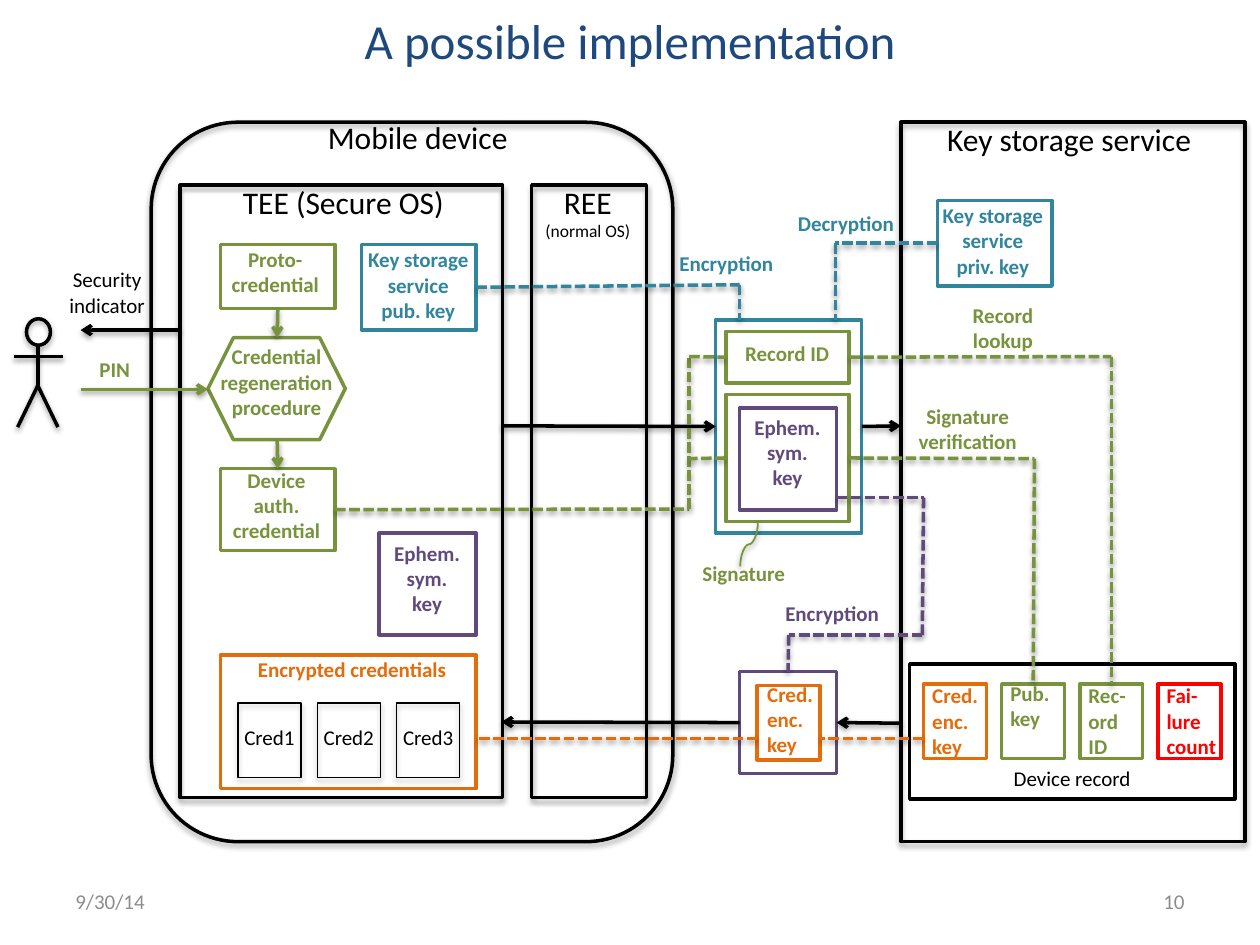
from dataclasses import dataclass
from typing import NamedTuple, Optional, Union

from lxml import etree
from pptx import Presentation
from pptx.dml.color import RGBColor
from pptx.enum.dml import MSO_LINE
from pptx.enum.shapes import MSO_CONNECTOR, MSO_SHAPE
from pptx.enum.text import MSO_ANCHOR, MSO_AUTO_SIZE, PP_ALIGN
from pptx.oxml.ns import qn
from pptx.util import Inches, Pt

RECT, ROUNDED = MSO_SHAPE.RECTANGLE, MSO_SHAPE.ROUNDED_RECTANGLE
HEXAGON, OVAL = MSO_SHAPE.HEXAGON, MSO_SHAPE.OVAL
STRAIGHT, CURVE = MSO_CONNECTOR.STRAIGHT, MSO_CONNECTOR.CURVE
LEFT, CENTER, RIGHT = PP_ALIGN.LEFT, PP_ALIGN.CENTER, PP_ALIGN.RIGHT
MIDDLE, TOP_ANCHOR = MSO_ANCHOR.MIDDLE, MSO_ANCHOR.TOP
GROW, NO_GROW = MSO_AUTO_SIZE.SHAPE_TO_FIT_TEXT, MSO_AUTO_SIZE.NONE
DASH = MSO_LINE.SQUARE_DOT
TOP, WEST, BOTTOM, EAST = range(4)
FONT = "Calibri"
COLORS = {
    "black": "000000", "white": "FFFFFF", "gray": "8C8C8C", "navy": "1F497D",
    "green": "77933C", "teal": "31859C", "purple": "604A7B",
    "orange": "E46C0A", "red": "FF0000",
}


class Point(NamedTuple):
    x: float
    y: float


class Side(NamedTuple):
    box: str
    site: int


Stop = Union[Point, Side]


@dataclass
class Box:
    key: str
    left: float
    top: float
    width: float
    height: float
    color: str = "black"
    shadow: bool = False
    kind: int = RECT
    weight: float = 2


@dataclass
class Label:
    text: str
    left: float
    top: float
    width: float
    height: float
    color: str = "black"
    size: float = 12
    bold: bool = True
    align: int = CENTER
    right_inset: float = 0.1
    top_inset: float = 0.05
    second_size: Optional[float] = None
    fill: Optional[str] = None
    footer: bool = False


@dataclass
class Route:
    stops: list
    color: str = "black"
    dashed: bool = False
    arrow: bool = False


FIELD_X = [7.33 + 0.62 * i for i in range(4)]
FIELDS = [("Cred. enc. key", "orange", 5.37), ("Pub. key", "green", 5.35),
          ("Rec-ord ID", "green", 5.37), ("Fai-lure count", "red", 5.37)]
CRED_X = [1.89 + 0.63 * i for i in range(3)]

BOXES = [
    Box("mobile", 1.2, 0.97, 4.14, 5.71, shadow=True, kind=ROUNDED),
    Box("service", 7.15, 0.97, 2.73, 5.71, shadow=True),
    Box("tee", 1.43, 1.47, 2.56, 4.86, shadow=True),
    Box("ree", 4.22, 1.47, 0.91, 4.86, shadow=True),
    Box("regeneration", 1.65, 2.68, 1.09, 0.81, "green", kind=HEXAGON),
    Box("head", 0.21, 2.53, 0.19, 0.21, shadow=True, kind=OVAL),
    Box("proto", 1.75, 1.94, 0.91, 0.51, "green"),
    Box("device auth", 1.75, 3.72, 0.91, 0.65, "green"),
    Box("device record", 7.22, 5.27, 2.58, 1.07),
    *(Box(text, x, 5.43, 0.5, 0.59, color)
      for x, (text, color, _) in zip(FIELD_X, FIELDS)),
    Box("local key", 3.01, 4.23, 0.77, 0.81, "purple"),
    Box("public key", 2.87, 1.94, 0.91, 0.68, "teal"),
    Box("request", 5.68, 2.54, 1.16, 1.69, "teal"),
    Box("private key", 7.44, 1.59, 0.91, 0.68, "teal"),
    Box("sent key", 5.87, 3.24, 0.77, 0.81, "purple"),
    Box("returned key", 6.01, 5.44, 0.5, 0.59, "orange"),
    Box("response", 5.87, 5.33, 0.77, 0.81, "purple"),
    Box("credentials", 1.75, 5.2, 2.03, 1.06, "orange"),
    *(Box(f"cred {x}", x, 5.58, 0.5, 0.59, shadow=True, weight=0.75) for x in CRED_X),
    Box("signed", 5.76, 3.13, 0.98, 1.01, "green"),
    Box("record id", 5.76, 2.63, 0.98, 0.41, "green"),
]

LABELS = [
    Label("9/30/14", 0.5, 6.95, 2.33, 0.4, "gray", bold=False, align=LEFT, footer=True),
    Label("10", 7.17, 6.95, 2.33, 0.4, "gray", bold=False, align=RIGHT, footer=True),
    Label("Mobile device", 2.09, 0.89, 2.45, 0.4, size=18, bold=False),
    Label("Key storage service", 7.26, 0.9, 2.45, 0.4, size=18, bold=False),
    Label("TEE (Secure OS)", 1.5, 1.4, 2.45, 0.4, size=18, bold=False),
    Label("REE\n(normal OS)", 4.17, 1.4, 0.99, 0.57, size=18, bold=False, second_size=10),
    *(Label(text, x - 0.03, y, 0.52, 0.71, color, align=LEFT, right_inset=0)
      for x, (text, color, y) in zip(FIELD_X, FIELDS)),
    Label("Cred. enc. key", 5.99, 5.36, 0.52, 0.71, "orange", align=LEFT, right_inset=0),
    Label("Proto-\ncredential", 1.5, 1.91, 1.37, 0.5, "green"),
    Label("Credential\nregeneration\nprocedure", 1.51, 2.68, 1.37, 0.71, "green"),
    Label("Device\nauth.\ncredential", 1.51, 3.66, 1.37, 0.71, "green"),
    Label("Signature verification", 7.17, 3.15, 1.02, 0.5, "green"),
    Label("Record lookup", 7.45, 2.35, 1.02, 0.5, "green"),
    *(Label("Ephem.\vsym. key", x, y, 0.76, 0.71, "purple")
      for x, y in [(3.01, 4.24), (5.87, 3.24)]),
    Label("Security indicator", 0.39, 2.07, 0.92, 0.5, bold=False),
    Label("PIN", 0.69, 2.78, 0.49, 0.3, "green", align=LEFT),
    Label("Key storage service\npub. key", 2.75, 1.91, 1.14, 0.71, "teal"),
    Label("Key storage service\npriv. key", 7.31, 1.56, 1.14, 0.71, "teal"),
    Label("Encryption", 5.25, 1.94, 1.03, 0.3, "teal"),
    Label("Decryption", 6.2, 1.62, 1.03, 0.3, "teal"),
    Label("Encryption", 6.09, 4.72, 1.03, 0.3, "purple"),
    Label("Device record", 7.66, 6.03, 1.7, 0.3, bold=False),
    Label("Encrypted credentials", 1.73, 5.16, 2.03, 0.3, "orange", right_inset=0),
    *(Label(f"Cred{n}", x - 0.05, 5.7, 0.62, 0.3, bold=False, align=LEFT)
      for n, x in enumerate(CRED_X, 1)),
    Label("Signature", 5.41, 4.45, 0.92, 0.25, "green", align=RIGHT, top_inset=0,
          fill="white"),
    Label("Record ID", 5.75, 2.7, 0.93, 0.25, "green", align=RIGHT, top_inset=0),
]

ROUTES = [
    Route([Point(0.3, 2.74), Point(0.3, 3.07)]),
    Route([Point(0.11, 2.83), Point(0.5, 2.83)]),
    Route([Point(0.14, 3.39), Point(0.3, 3.06), Point(0.46, 3.39)]),
    Route([Point(1.43, 2.62), Point(0.64, 2.62)], arrow=True),
    Route([Point(0.64, 3.09), Point(1.65, 3.09)], "green", arrow=True),
    Route([Side("proto", BOTTOM), Point(2.2, 2.68)], "green", arrow=True),
    Route([Point(2.2, 3.5), Side("device auth", TOP)], "green", arrow=True),
    Route([Point(3.98, 3.38), Side("request", WEST)], arrow=True),
    Route([Side("request", EAST), Point(7.15, 3.38)], arrow=True),
    Route([Point(7.15, 5.74), Side("response", EAST)], arrow=True),
    Route([Side("response", WEST), Point(3.98, 5.73)], arrow=True),
    Route([Side("signed", EAST), Point(8.21, 3.64), Side("Pub. key", TOP)], "green", True),
    Route([Side("record id", EAST), Point(8.82, 2.83), Side("Rec-ord ID", TOP)],
          "green", True),
    Route([Side("device auth", EAST), Point(5.47, 4.04), Point(5.47, 2.83),
           Side("record id", WEST)], "green", True),
    Route([Side("signed", WEST), Point(5.47, 3.64)], "green", True),
    Route([Side("public key", EAST), Point(5.87, 2.26), Point(5.87, 2.54)], "teal", True),
    Route([Side("private key", WEST), Point(6.63, 1.93), Point(6.63, 2.54)], "teal", True),
    Route([Point(6.64, 3.95), Point(7.33, 3.95), Point(7.32, 5.04), Point(6.26, 5.04),
           Side("response", TOP)], "purple", True),
    Route([Point(7.33, 5.86), Point(6.51, 5.86)], "orange", True),
    Route([Point(6.01, 5.86), Point(3.77, 5.86)], "orange", True),
]


def rgb(color: str) -> RGBColor:
    return RGBColor.from_string(COLORS[color])


def set_effects(shape, opacity: int = 0, distance: float = 0) -> None:
    effects = etree.SubElement(shape._element.spPr, qn("a:effectLst"))
    if opacity:
        shadow = etree.SubElement(
            effects, qn("a:outerShdw"), blurRad=str(Pt(3.1)), dist=str(Pt(distance)),
            dir="5400000", rotWithShape="0")
        tint = etree.SubElement(shadow, qn("a:srgbClr"), val=COLORS["black"])
        etree.SubElement(tint, qn("a:alpha"), val=str(opacity * 1000))


def draw_box(slide, box: Box):
    shape = slide.shapes.add_shape(
        box.kind, *map(Inches, (box.left, box.top, box.width, box.height)))
    shape.fill.background()
    shape.line.color.rgb = rgb(box.color)
    shape.line.width = Pt(box.weight)
    set_effects(shape, 35 if box.shadow else 0, 1.8)
    return shape


def draw_label(slide, label: Label) -> None:
    holder = slide.shapes.add_textbox(
        *map(Inches, (label.left, label.top, label.width, label.height)))
    if label.fill:
        holder.fill.solid()
        holder.fill.fore_color.rgb = rgb(label.fill)
    frame = holder.text_frame
    frame.word_wrap = True
    frame.auto_size = NO_GROW if label.footer else GROW
    frame.vertical_anchor = MIDDLE if label.footer else TOP_ANCHOR
    frame.margin_right = Inches(label.right_inset)
    frame.margin_top = Inches(label.top_inset)
    frame.text = label.text
    for index, paragraph in enumerate(frame.paragraphs):
        paragraph.alignment = label.align
        font = paragraph.font
        font.name, font.bold = FONT, label.bold
        font.size = Pt(label.second_size if index and label.second_size else label.size)
        font.color.rgb = rgb(label.color)


def draw_line(slide, kind: int, start: Point, end: Point, color: str, weight: float):
    line = slide.shapes.add_connector(kind, *map(Inches, (*start, *end)))
    line.line.color.rgb = rgb(color)
    line.line.width = Pt(weight)
    set_effects(line, 38, 1.6)
    return line


def draw_route(slide, route: Route, drawn: dict) -> None:
    last = len(route.stops) - 2
    for index, (start, end) in enumerate(zip(route.stops, route.stops[1:])):
        ends = [Point(0, 0) if isinstance(stop, Side) else stop for stop in (start, end)]
        line = draw_line(slide, STRAIGHT, *ends, route.color, 2)
        if isinstance(start, Side):
            line.begin_connect(drawn[start.box], start.site)
        if isinstance(end, Side):
            line.end_connect(drawn[end.box], end.site)
        if route.dashed:
            line.line.dash_style = DASH
        if route.arrow and index == last:
            etree.SubElement(line.line._get_or_add_ln(), qn("a:tailEnd"), type="arrow")


def draw_title(slide) -> None:
    title = slide.shapes.title
    title.left, title.top, title.width, title.height = map(Inches, (0.5, -0.31, 9, 1.25))
    title.text_frame.text = "A possible implementation"
    heading = title.text_frame.paragraphs[0]
    heading.alignment = CENTER
    heading.font.name, heading.font.size = FONT, Pt(28)
    heading.font.color.rgb = rgb("navy")


def main() -> None:
    deck = Presentation()
    deck.slide_width, deck.slide_height = Inches(10), Inches(7.5)
    slide = deck.slides.add_slide(deck.slide_layouts[5])
    draw_title(slide)
    drawn = {box.key: draw_box(slide, box) for box in BOXES}
    for label in LABELS:
        draw_label(slide, label)
    for route in ROUTES:
        draw_route(slide, route, drawn)
    leader = draw_line(slide, CURVE, Point(5.77, 4.25), Point(6.12, 4.39), "green", 1)
    leader._element.spPr.find(qn("a:xfrm")).set("rot", "5400000")
    deck.save("out.pptx")


if __name__ == "__main__":
    main()
